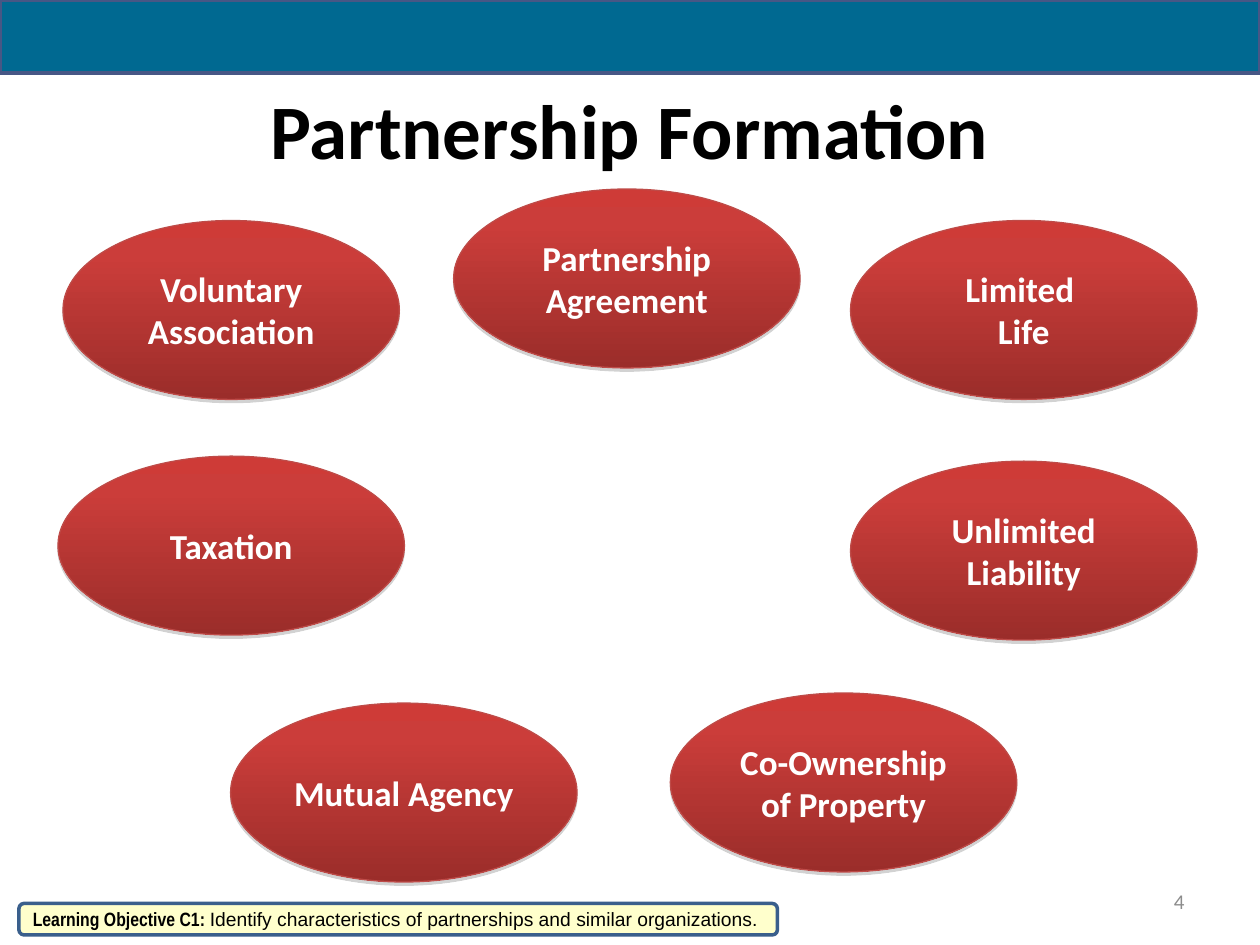
from copy import deepcopy

from pptx import Presentation
from pptx.dml.color import RGBColor
from pptx.enum import shapes, text
from pptx.oxml import parse_xml
from pptx.oxml.ns import nsdecls, qn
from pptx.util import Inches, Pt

CENTER = text.PP_ALIGN.CENTER
OVAL_SIZE = (2.75, 1.42)
RED_STOPS = [(0, "CE3B37"), (0.2, "CB3D3A"), (1, "9B2D2A")]
FEATURES = [
    ("Partnership Agreement", 3.6, 1.5, 2.75),
    ("Voluntary Association", 0.5, 1.75, 2.67),
    ("Limited \vLife", 6.75, 1.75, 2.75),
    ("Taxation", 0.46, 3.62, 2.75),
    ("Unlimited Liability", 6.75, 3.66, 2.75),
    ("Mutual Agency", 1.83, 5.58, 2.75),
    ("Co-Ownership of Property", 5.32, 5.5, 2.75),
]


def rgb(value):
    return RGBColor.from_string(value)


def style_run(r, size, color, bold=False, font="Calibri"):
    r.font.size = Pt(size)
    r.font.name = font
    r.font.bold = bold
    r.font.color.rgb = rgb(color)


def set_text(sp, words, size, color, bold=False, align=CENTER):
    tf = sp.text_frame
    tf.word_wrap = True
    tf.vertical_anchor = text.MSO_ANCHOR.MIDDLE
    p = tf.paragraphs[0]
    p.text = words
    p.alignment = align
    for r in p.runs:
        style_run(r, size, color, bold)


def add_label(s, box, *args, **kwargs):
    sp = s.shapes.add_textbox(*map(Inches, box))
    set_text(sp, *args, **kwargs)


def add_panel(s, kind, box, line, width, fill=None):
    sp = s.shapes.add_shape(kind, *map(Inches, box))
    sp.shadow.inherit = False
    sp.line.color.rgb = rgb(line)
    sp.line.width = Pt(width)
    if fill:
        sp.fill.solid()
        sp.fill.fore_color.rgb = rgb(fill)
    return sp


def fill_gradient(sp, stops):
    sp.fill.gradient()
    sp.fill.gradient_angle = 270
    stop_list = sp._element.spPr.find(".//" + qn("a:gsLst"))
    stop_list.append(deepcopy(stop_list[-1]))
    for stop, (position, color) in zip(sp.fill.gradient_stops, stops):
        stop.position = position
        stop.color.rgb = rgb(color)


def add_drop_shadow(sp):
    sp._element.spPr.find(qn("a:effectLst")).append(parse_xml(
        f'<a:outerShdw {nsdecls("a")} blurRad="0" dist="{Pt(1.8)}" dir="5400000" rotWithShape="0">'
        '<a:srgbClr val="808080"><a:alpha val="35000"/></a:srgbClr></a:outerShdw>'))


def add_feature(s, box, words):
    sp = add_panel(s, shapes.MSO_SHAPE.OVAL, box, "BE4B48", 0.75)
    fill_gradient(sp, RED_STOPS)
    add_drop_shadow(sp)
    set_text(sp, words, 20, "FFFFFF", bold=True)


def add_objective(s, box):
    sp = add_panel(s, shapes.MSO_SHAPE.ROUNDED_RECTANGLE, box, "3A5F8C", 2, "FFFFCC")
    set_text(sp, "Learning Objective C1: ", 11, "000000", align=text.PP_ALIGN.LEFT)
    p = sp.text_frame.paragraphs[0]
    style_run(p.runs[0], 11, "000000", True, "Arial Narrow")
    r = p.add_run()
    r.text = "Identify characteristics of partnerships and similar organizations."
    style_run(r, 11, "000000", font="Arial")


def main():
    prs = Presentation()
    prs.slide_width, prs.slide_height = Inches(10), Inches(7.5)
    s = prs.slides.add_slide(prs.slide_layouts[6])
    add_label(s, (0.5, 0.5, 9, 1.05), "Partnership Formation", 44, "000000", bold=True)
    for words, left, top, width in FEATURES:
        add_feature(s, (left, top, width, OVAL_SIZE[1]), words)
    add_panel(s, shapes.MSO_SHAPE.RECTANGLE, (0, 0, 10, 0.58), "475785", 2.25, "006991")
    add_label(s, (7.17, 6.95, 2.33, 0.4), "4", 12, "8C8C8C", align=text.PP_ALIGN.RIGHT)
    add_objective(s, (0.15, 7.17, 6.02, 0.25))
    prs.save("out.pptx")


if __name__ == "__main__":
    main()
